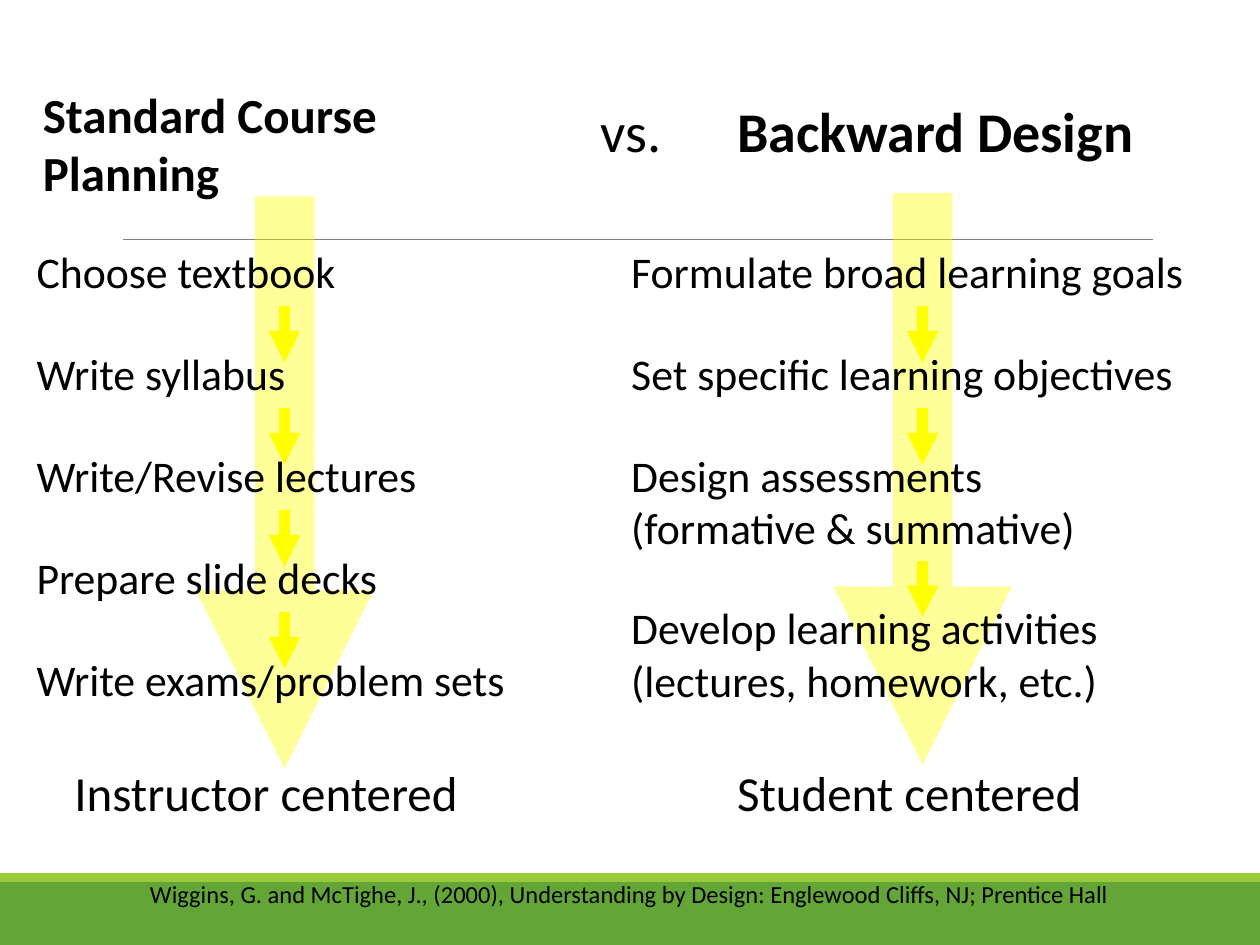
from dataclasses import dataclass

from lxml.etree import SubElement
from pptx import Presentation
from pptx.dml.color import RGBColor
from pptx.enum.shapes import MSO_CONNECTOR as Connector, MSO_SHAPE as Shape
from pptx.enum.text import MSO_ANCHOR as Anchor, MSO_AUTO_SIZE as AutoSize, PP_ALIGN as Align
from pptx.oxml.ns import qn
from pptx.util import Pt

BLACK = RGBColor(0x00, 0x00, 0x00)
GRAY = RGBColor(0x80, 0x80, 0x80)
YELLOW = RGBColor(0xFF, 0xFF, 0x00)
GREEN = RGBColor(0x63, 0xA5, 0x37)
LIME = RGBColor(0x99, 0xCB, 0x38)

FONT = "Calibri"
FIRST_STEP_TOP = 139.7
STEP_GAP = 58.3
LINE_HEIGHT = 28.8
ARROW_RISE = 22.9
ARROW_LENGTH = 32


@dataclass
class Column:
    left: float
    width: float
    arrow_x: float
    arrow_top: float
    steps: list[list[str]]
    outcome: str
    outcome_left: float
    outcome_width: float


COLUMNS = [
    Column(360.7, 332.6, 527.2, 110.2, [
        ["Formulate broad learning goals"],
        ["Set specific learning objectives"],
        ["Design assessments", "(formative & summative)"],
        ["Develop learning activities", "(lectures, homework, etc.)"],
    ], "Student centered", 421.2, 198.7),
    Column(20.9, 283.7, 162.6, 112.3, [
        ["Choose textbook"],
        ["Write syllabus"],
        ["Write/Revise lectures"],
        ["Prepare slide decks"],
        ["Write exams/problem sets"],
    ], "Instructor centered", 42.5, 221.8),
]


def write_text(shape, lines, *, size, bold=False, anchor=Anchor.MIDDLE, wrap=True, tab=None):
    frame = shape.text_frame
    frame.auto_size = AutoSize.NONE
    frame.word_wrap = wrap
    frame.vertical_anchor = anchor
    frame.margin_left = frame.margin_right = frame.margin_top = frame.margin_bottom = 0
    frame.text = "\n".join(lines)
    for paragraph in frame.paragraphs:
        paragraph.alignment = Align.LEFT
        if tab:
            tabs = SubElement(paragraph._p.get_or_add_pPr(), qn("a:tabLst"))
            SubElement(tabs, qn("a:tab"), pos=str(Pt(tab)), algn="l")
        for run in paragraph.runs:
            run.font.name = FONT
            run.font.size = Pt(size)
            run.font.bold = bold
            run.font.color.rgb = BLACK
    return frame


def add_text(slide, lines: list[str], left: float, top: float, width: float, height: float, **style):
    box = slide.shapes.add_textbox(Pt(left), Pt(top), Pt(width), Pt(height))
    return write_text(box, lines, **style)


def add_bar(slide, top: float, height: float, color: RGBColor) -> None:
    bar = slide.shapes.add_shape(Shape.RECTANGLE, 0, Pt(top), Pt(720), Pt(height))
    bar.shadow.inherit = False
    bar.fill.solid()
    bar.fill.fore_color.rgb = color
    bar.line.fill.background()


def add_line(slide, x1: float, y1: float, x2: float, y2: float, color: RGBColor, width: float,
             arrow: bool = False, opacity: int = 100) -> None:
    connector = slide.shapes.add_connector(Connector.STRAIGHT, Pt(x1), Pt(y1), Pt(x2), Pt(y2))
    connector.line.color.rgb = color
    connector.line.width = Pt(width)
    properties = connector._element.spPr
    outline = properties.find(qn("a:ln"))
    if opacity < 100:
        color_element = outline.find(qn("a:solidFill"))[0]
        SubElement(color_element, qn("a:alpha"), val=str(opacity * 1000))
    if arrow:
        SubElement(outline, qn("a:tailEnd"), type="triangle")
    SubElement(properties, qn("a:effectLst"))


def add_column(slide, column: Column) -> None:
    add_line(slide, column.arrow_x, column.arrow_top, column.arrow_x, column.arrow_top + 326.9,
             YELLOW, 34, arrow=True, opacity=40)
    add_text(slide, [column.outcome], column.outcome_left, 435.6, column.outcome_width, 33.8,
             size=28, wrap=False)
    top = FIRST_STEP_TOP
    for index, lines in enumerate(column.steps):
        extra = (len(lines) - 1) * LINE_HEIGHT
        add_text(slide, lines, column.left, top, column.width, 34.6 + extra,
                 size=25, anchor=Anchor.TOP)
        if index:
            start = top - ARROW_RISE
            add_line(slide, column.arrow_x, start, column.arrow_x, start + ARROW_LENGTH,
                     YELLOW, 6, arrow=True)
        top += STEP_GAP + extra


def main() -> None:
    presentation = Presentation()
    presentation.slide_width, presentation.slide_height = Pt(720), Pt(540)
    slide = presentation.slides.add_slide(presentation.slide_layouts[5])

    add_bar(slide, 504, 36, GREEN)
    add_bar(slide, 499, 5, LIME)
    add_line(slide, 70.5, 136.8, 658.8, 136.8, GRAY, 0.5)

    title = slide.shapes.title
    title.left, title.top, title.width, title.height = Pt(24.5), Pt(51.1), Pt(239), Pt(61.2)
    write_text(title, ["Standard Course Planning"], size=28, bold=True)

    for column in COLUMNS:
        add_column(slide, column)

    heading = add_text(slide, ["vs.\t"], 343.4, 54.7, 307.4, 38.9, size=32, wrap=False, tab=77.8)
    design = heading.paragraphs[0].add_run()
    design.text = "Backward Design"
    design.font.name = FONT
    design.font.size = Pt(32)
    design.font.bold = True
    design.font.color.rgb = BLACK

    add_text(slide, ["Wiggins, G. and McTighe, J., (2000), Understanding by Design: "
                     "Englewood Cliffs, NJ; Prentice Hall"],
             85.7, 499.7, 548.6, 21.6, size=14)
    presentation.save("out.pptx")


if __name__ == "__main__":
    main()
